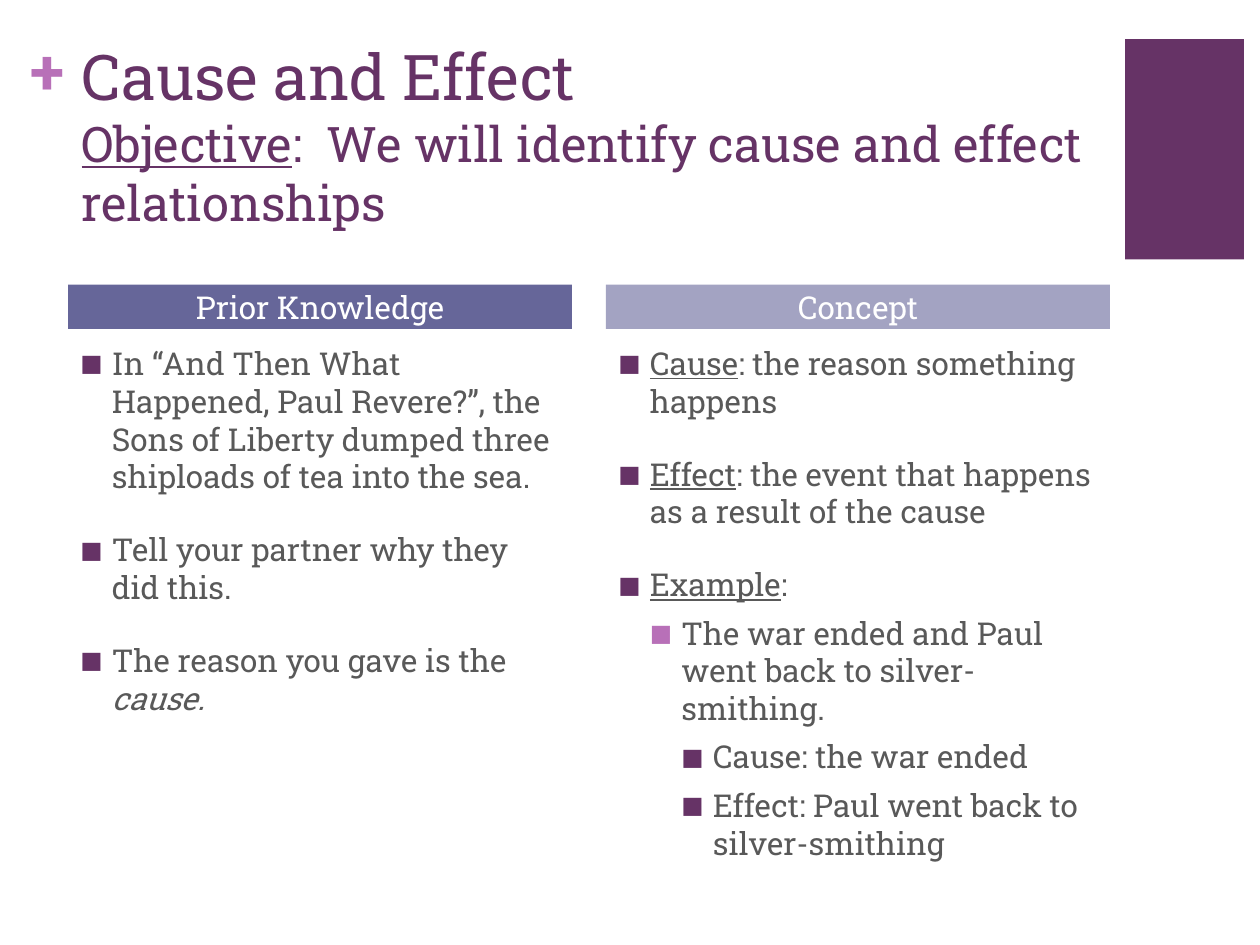
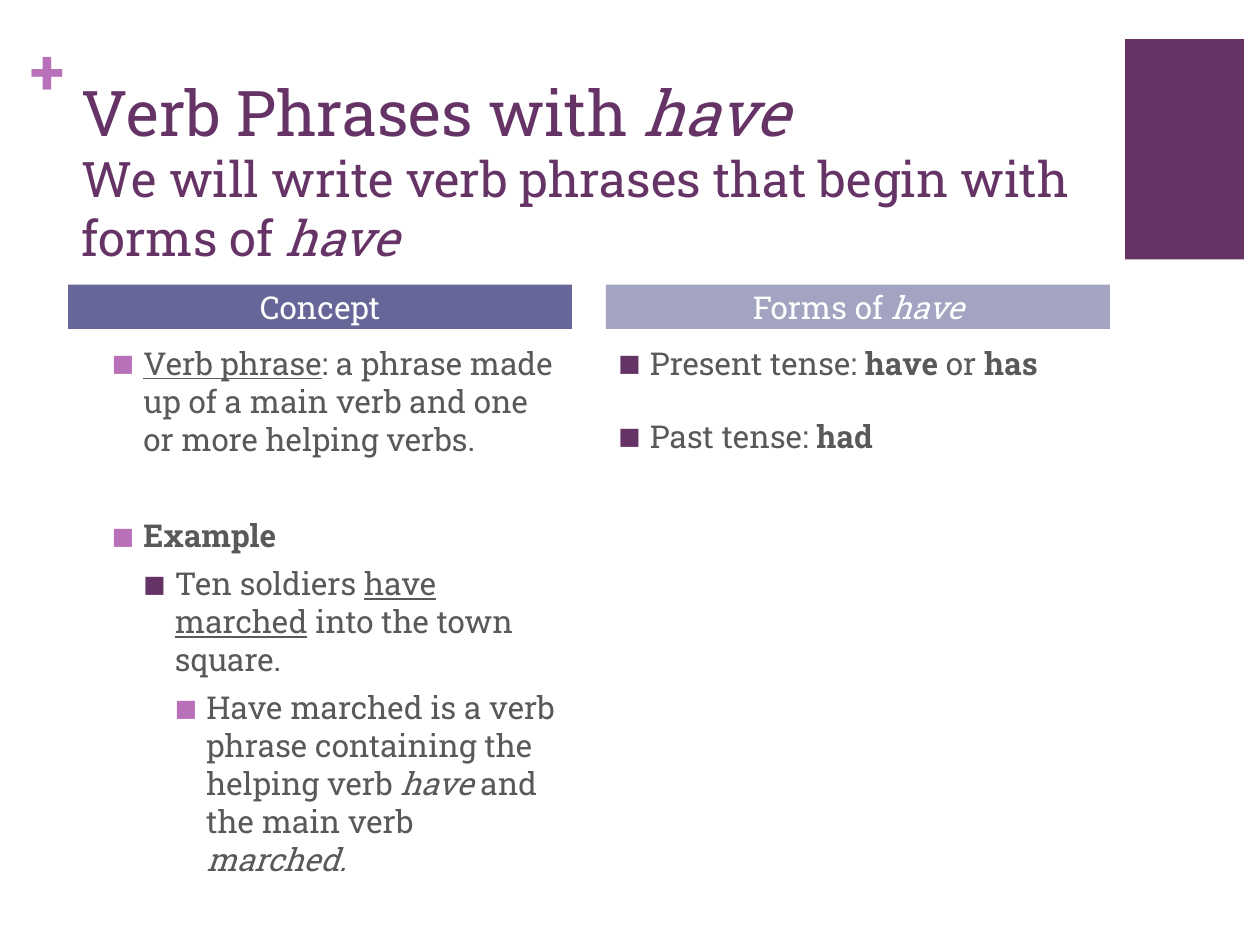
from dataclasses import dataclass

from pptx import Presentation
from pptx.dml.color import RGBColor as RGB
from pptx.enum.shapes import MSO_SHAPE as SHAPE
from pptx.enum.text import MSO_ANCHOR as ANCHOR, PP_ALIGN as ALIGN
from pptx.oxml.ns import qn
from pptx.util import Pt
from lxml.etree import SubElement


@dataclass(frozen=True)
class Theme:
    font: str = "Roboto Slab"
    plum: str = "663366"
    orchid: str = "B870B8"
    slate: str = "666699"
    lavender: str = "A3A3C2"
    grey: str = "595959"
    white: str = "FFFFFF"
    title_size: int = 36
    objective_size: int = 28
    body_size: int = 18


T = Theme()

COLUMN_LEFTS = (38.9, 346.3)
COLUMN_WIDTH = 288
HEADER_TOP, HEADER_HEIGHT = 162.7, 25.2
BODY_TOP, BODY_HEIGHT = 193, 289.4
TITLE_LEFT, TITLE_WIDTH, TITLE_BOTTOM = 39.6, 594.7, 126
INDENT = 18
TOP_GAP, SUB_GAP, WIDE_GAP = 20, 6, 33.6


def write(p, runs, size=T.body_size, color=T.grey, bold=False):
    for run in [runs] if isinstance(runs, str) else runs:
        text, marks = (run, "") if isinstance(run, str) else run
        r = p.add_run()
        r.text = text
        font = r.font
        font.name, font.size = T.font, Pt(size)
        font.color.rgb = RGB.from_string(color)
        font.bold = bold or "b" in marks
        font.italic = "i" in marks
        font.underline = "u" in marks


def set_bullet(p, level):
    p.level = level
    pPr = p._p.get_or_add_pPr()
    pPr.set("marL", str(Pt(INDENT * (level + 1))))
    pPr.set("indent", str(-Pt(INDENT)))
    color = SubElement(pPr, qn("a:buClr"))
    SubElement(color, qn("a:srgbClr"), val=T.orchid if level % 2 else T.plum)
    SubElement(pPr, qn("a:buSzPct"), val="75000")
    SubElement(pPr, qn("a:buFont"), typeface=T.font)
    SubElement(pPr, qn("a:buChar"), char="■")


def add_box(slide, left, top, width, height):
    sp = slide.shapes.add_textbox(Pt(left), Pt(top), Pt(width), Pt(height))
    sp.text_frame.word_wrap = True
    return sp.text_frame


def add_rect(slide, left, top, width, height, fill):
    sp = slide.shapes.add_shape(SHAPE.RECTANGLE, Pt(left), Pt(top), Pt(width), Pt(height))
    sp.shadow.inherit = False
    sp.fill.solid()
    sp.fill.fore_color.rgb = RGB.from_string(fill)
    sp.line.fill.background()
    return sp


def add_decor(slide):
    add_rect(slide, 643, 22.3, 67.8, 126, T.plum)
    tf = add_box(slide, 17.3, 18, 20.9, 43.9)
    tf.margin_left = tf.margin_top = tf.margin_right = tf.margin_bottom = 0
    write(tf.paragraphs[0], "+", size=T.title_size, color=T.orchid, bold=True)


def add_title(slide, top, title, objective):
    tf = add_box(slide, TITLE_LEFT, top, TITLE_WIDTH, TITLE_BOTTOM - top)
    p = tf.paragraphs[0]
    write(p, title, size=T.title_size, color=T.plum)
    p.add_line_break()
    write(p, objective, size=T.objective_size, color=T.plum)


def add_header(slide, left, runs, fill):
    sp = add_rect(slide, left, HEADER_TOP, COLUMN_WIDTH, HEADER_HEIGHT, fill)
    tf = sp.text_frame
    tf.word_wrap = True
    tf.margin_top = tf.margin_bottom = 0
    tf.vertical_anchor = ANCHOR.MIDDLE
    p = tf.paragraphs[0]
    p.alignment = ALIGN.CENTER
    write(p, runs, color=T.white)


def add_bullets(slide, left, items):
    tf = add_box(slide, left, BODY_TOP, COLUMN_WIDTH, BODY_HEIGHT)
    for i, (level, runs, *gap) in enumerate(items):
        p = tf.add_paragraph() if i else tf.paragraphs[0]
        p.space_before = Pt(gap[0] if gap else SUB_GAP if level else TOP_GAP)
        set_bullet(p, level)
        write(p, runs)


def add_lesson(prs, title_top, title, objective, columns):
    slide = prs.slides.add_slide(prs.slide_layouts[6])
    add_decor(slide)
    add_title(slide, title_top, title, objective)
    for left, fill, (header, items) in zip(COLUMN_LEFTS, (T.slate, T.lavender), columns):
        add_bullets(slide, left, items)
        add_header(slide, left, header, fill)


def main():
    prs = Presentation()
    prs.slide_width, prs.slide_height = Pt(720), Pt(540)

    prior_knowledge = [
        (0, "In “And Then What Happened, Paul Revere?”, the Sons of Liberty "
            "dumped three shiploads of tea into the sea."),
        (0, "Tell your partner why they did this."),
        (0, ["The reason you gave is the ", ("cause.", "i")]),
    ]
    cause_concept = [
        (0, [("Cause", "u"), ": the reason something happens"]),
        (0, [("Effect", "u"), ": the event that happens as a result of the cause"]),
        (0, [("Example", "u"), ":"]),
        (1, "The war ended and Paul went back to silver-smithing."),
        (2, "Cause: the war ended"),
        (2, "Effect: Paul went back to silver-smithing"),
    ]
    add_lesson(
        prs, 18, "Cause and Effect",
        [("Objective", "u"), ":  We will identify cause and effect relationships"],
        [("Prior Knowledge", prior_knowledge), ("Concept", cause_concept)])

    verb_concept = [
        (1, [("Verb phrase", "u"),
             ": a phrase made up of a main verb and one or more helping verbs."]),
        (1, [("Example", "b")], WIDE_GAP),
        (2, ["Ten soldiers ", ("have marched", "u"), " into the town square."]),
        (3, ["Have marched is a verb phrase containing the helping verb ",
             ("have", "i"), " and the main verb ", ("marched.", "i")]),
    ]
    have_forms = [
        (0, ["Present tense: ", ("have ", "b"), "or ", ("has", "b")]),
        (0, ["Past tense: ", ("had", "b")]),
    ]
    add_lesson(
        prs, 38.2, ["Verb Phrases with ", ("have", "i")],
        ["We will write verb phrases that begin with forms of ", ("have", "i")],
        [("Concept", verb_concept), (["Forms of ", ("have", "i")], have_forms)])

    prs.save("out.pptx")


if __name__ == "__main__":
    main()
